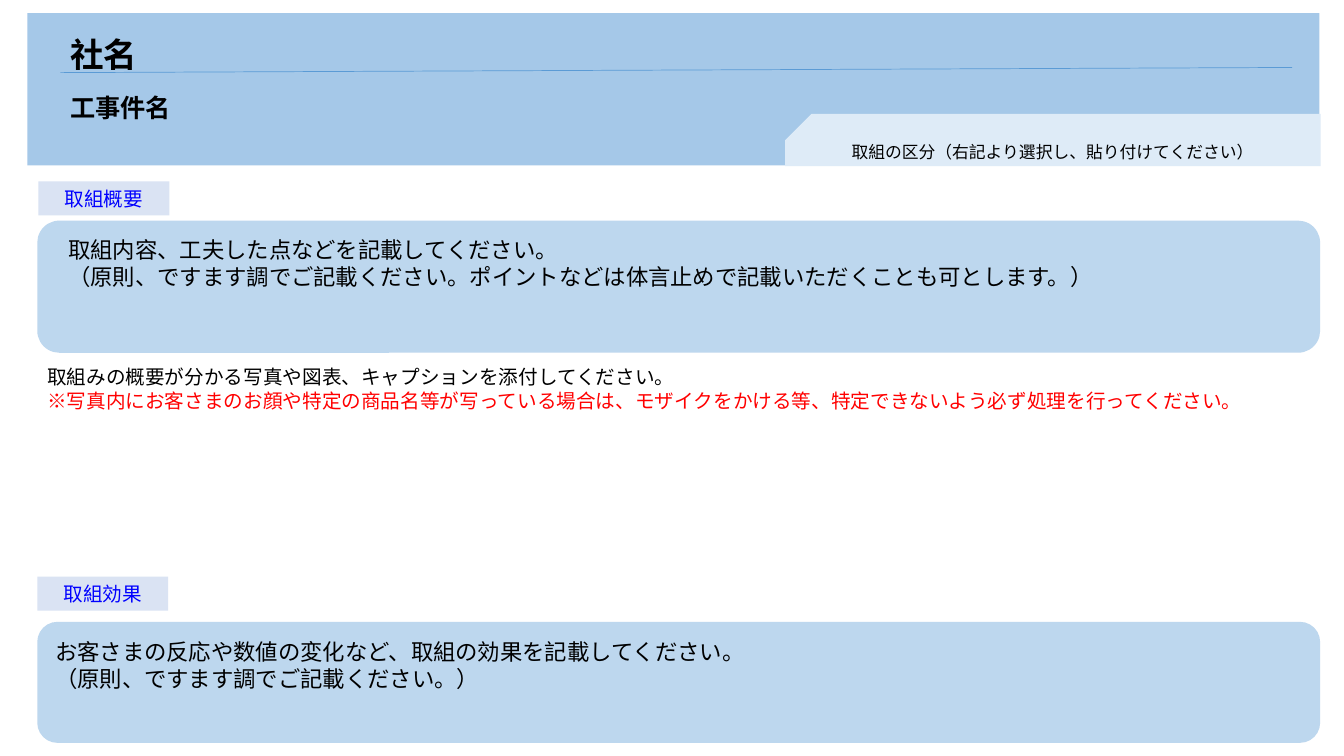
from dataclasses import dataclass

from lxml.etree import SubElement
from pptx import Presentation
from pptx.dml.color import RGBColor
from pptx.enum.shapes import MSO_CONNECTOR, MSO_SHAPE
from pptx.enum.text import MSO_ANCHOR, PP_ALIGN
from pptx.oxml.ns import qn
from pptx.shapes.autoshape import Shape
from pptx.util import Cm, Pt


@dataclass(frozen=True)
class Theme:
    font: str = "Arial"
    band: str = "69A4D9"
    tab: str = "DEEBF7"
    panel: str = "BDD7EE"
    label: str = "DAE3F3"
    rule: str = "5B9BD5"
    ink: str = "000000"
    blue: str = "0000FF"
    red: str = "FF0000"
    title: int = 24
    subject: int = 18
    body: int = 16
    note: int = 14
    small: int = 12


@dataclass(frozen=True)
class Area:
    left: float
    top: float
    width: float
    height: float

    def lengths(self) -> tuple[Cm, Cm, Cm, Cm]:
        return Cm(self.left), Cm(self.top), Cm(self.width), Cm(self.height)


@dataclass(frozen=True)
class Line:
    text: str
    color: str


@dataclass(frozen=True)
class Block:
    area: Area
    lines: tuple[Line, ...]
    size: int
    bold: bool = False
    spacing: float | None = None


@dataclass(frozen=True)
class Label:
    area: Area
    text: str


THEME = Theme()

BAND = Area(0.69, 0.33, 32.56, 3.84)
TAB = Area(19.79, 2.87, 13.49, 1.32)
PANELS = (Area(0.94, 5.56, 32.33, 3.33), Area(0.94, 15.67, 32.33, 3.05))
LABELS = (
    Label(Area(0.97, 4.57, 3.3, 0.86), "取組概要"),
    Label(Area(0.94, 14.53, 3.3, 0.86), "取組効果"),
)
BLOCKS = (
    Block(Area(1.52, 0.23, 31.06, 1.8), (Line("社名", THEME.ink),),
          THEME.title, bold=True, spacing=1.5),
    Block(Area(1.52, 1.83, 31.06, 1.42), (Line("工事件名", THEME.ink),),
          THEME.subject, bold=True, spacing=1.5),
    Block(Area(21.21, 3.45, 11.35, 0.76),
          (Line("取組の区分（右記より選択し、貼り付けてください）", THEME.ink),), THEME.small),
    Block(Area(1.47, 5.82, 31.8, 3.68), (
        Line("取組内容、工夫した点などを記載してください。", THEME.ink),
        Line("（原則、ですます調でご記載ください。"
             "ポイントなどは体言止めで記載いただくことも可とします。）", THEME.ink),
    ), THEME.body),
    Block(Area(0.94, 9.07, 31.8, 1.45), (
        Line("取組みの概要が分かる写真や図表、キャプションを添付してください。", THEME.ink),
        Line("※写真内にお客さまのお顔や特定の商品名等が写っている場合は、"
             "モザイクをかける等、特定できないよう必ず処理を行ってください。", THEME.red),
    ), THEME.note),
    Block(Area(1.14, 15.95, 32.13, 2.31), (
        Line("お客さまの反応や数値の変化など、取組の効果を記載してください。", THEME.ink),
        Line("（原則、ですます調でご記載ください。）", THEME.ink),
    ), THEME.body),
)


def draw_shape(shapes, kind: MSO_SHAPE, area: Area, color: str) -> Shape:
    shape = shapes.add_shape(kind, *area.lengths())
    shape.shadow.inherit = False
    shape.fill.solid()
    shape.fill.fore_color.rgb = RGBColor.from_string(color)
    shape.line.fill.background()
    return shape


def add_text(para, line: Line, size: int, bold: bool = False) -> None:
    run = para.add_run()
    run.text = line.text
    run.font.name = THEME.font
    run.font.size = Pt(size)
    run.font.bold = bold
    run.font.color.rgb = RGBColor.from_string(line.color)


def draw_block(shapes, block: Block) -> None:
    frame = shapes.add_textbox(*block.area.lengths()).text_frame
    frame.word_wrap = True
    for index, line in enumerate(block.lines):
        para = frame.add_paragraph() if index else frame.paragraphs[0]
        if block.spacing:
            para.line_spacing = block.spacing
        add_text(para, line, block.size, block.bold)


def draw_label(shapes, label: Label) -> None:
    shape = draw_shape(shapes, MSO_SHAPE.RECTANGLE, label.area, THEME.label)
    frame = shape.text_frame
    frame.vertical_anchor = MSO_ANCHOR.MIDDLE
    para = frame.paragraphs[0]
    para.alignment = PP_ALIGN.CENTER
    add_text(para, Line(label.text, THEME.blue), THEME.note)


def draw_header(shapes) -> None:
    # Translucent band
    band = draw_shape(shapes, MSO_SHAPE.RECTANGLE, BAND, THEME.band)
    color = band.fill._xPr.find(qn("a:solidFill"))[0]
    SubElement(color, qn("a:alpha")).set("val", "60000")

    # Category tab, with its cut corner on the left
    tab = draw_shape(shapes, MSO_SHAPE.SNIP_1_RECTANGLE, TAB, THEME.tab)
    tab.adjustments[0] = 0.5
    tab._element.spPr.xfrm.set("flipH", "1")

    # Rule under the company name
    rule = shapes.add_connector(
        MSO_CONNECTOR.STRAIGHT, Cm(1.52), Cm(1.83), Cm(32.56), Cm(1.7))
    rule.line.color.rgb = RGBColor.from_string(THEME.rule)
    rule.line.width = Pt(0.5)
    SubElement(rule._element.spPr, qn("a:effectLst"))


def main() -> None:
    deck = Presentation()
    deck.slide_width, deck.slide_height = Cm(33.87), Cm(19.05)
    shapes = deck.slides.add_slide(deck.slide_layouts[6]).shapes

    draw_header(shapes)
    # Panels and section labels
    for area in PANELS:
        draw_shape(shapes, MSO_SHAPE.ROUNDED_RECTANGLE, area, THEME.panel)
    for label in LABELS:
        draw_label(shapes, label)
    # Text
    for block in BLOCKS:
        draw_block(shapes, block)

    deck.save("out.pptx")


if __name__ == "__main__":
    main()
